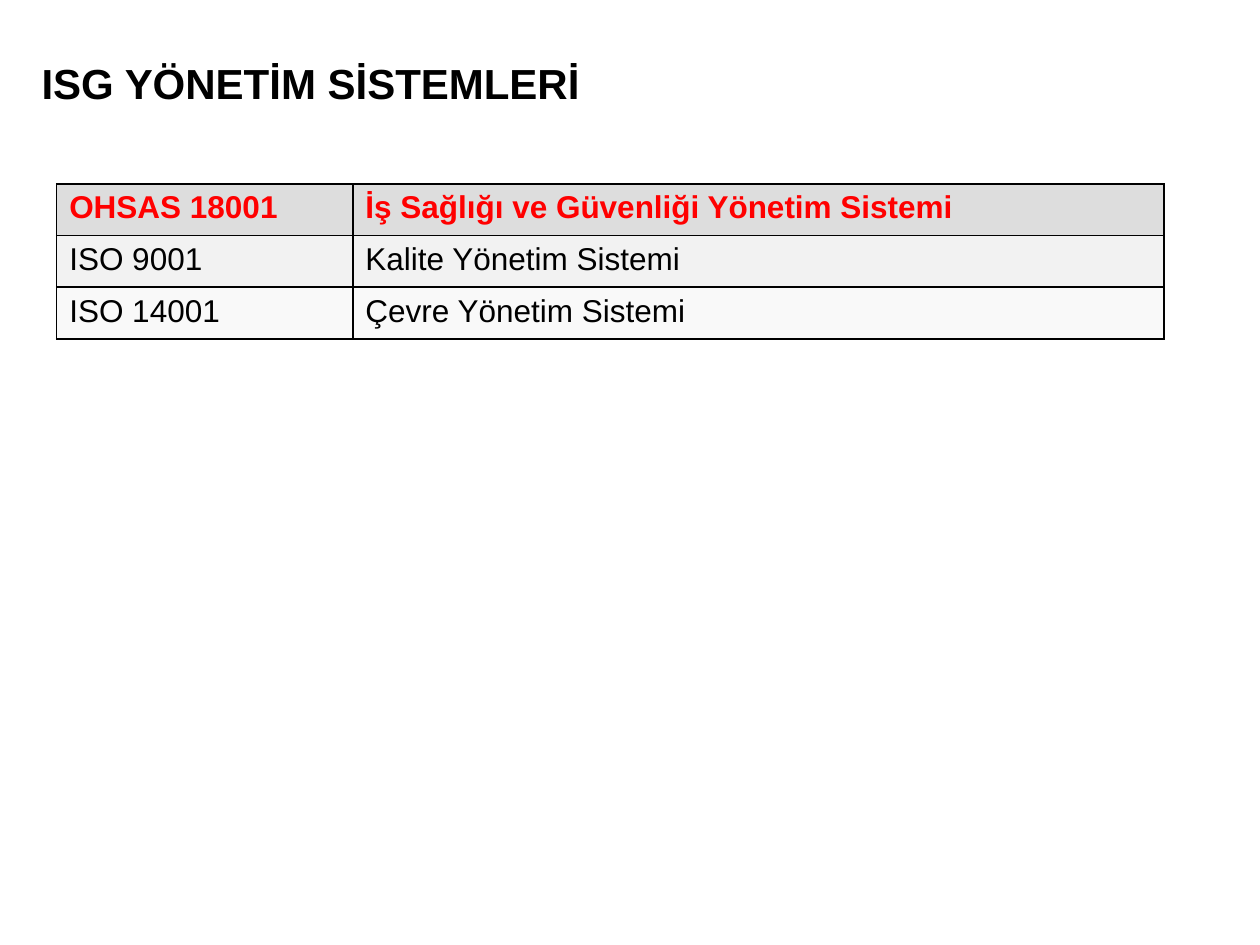
from lxml import etree
from pptx import Presentation
from pptx.dml.color import RGBColor
from pptx.enum.text import MSO_ANCHOR
from pptx.oxml.ns import qn
from pptx.util import Inches, Pt

TOP = MSO_ANCHOR.TOP
FONT = "Arial"
COLORS = {
    "text": "000000",
    "highlight": "FF0000",
    "border": "000000",
    "header": "DDDDDD",
    "quality": "F2F2F2",
    "environment": "F9F9F9",
}
STANDARDS = [
    ("OHSAS 18001", "İş Sağlığı ve Güvenliği Yönetim Sistemi", "header"),
    ("ISO 9001", "Kalite Yönetim Sistemi", "quality"),
    ("ISO 14001", "Çevre Yönetim Sistemi", "environment"),
]
COLUMN_WIDTHS = [2.35, 6.44]
ROW_HEIGHT = 0.41


def style(paragraph, size, color, bold):
    font = paragraph.font
    font.name = FONT
    font.size = Pt(size)
    font.bold = bold
    font.color.rgb = RGBColor.from_string(COLORS[color])


def add_borders(cell):
    properties = cell._tc.get_or_add_tcPr()
    for side in ("a:lnL", "a:lnR", "a:lnT", "a:lnB"):
        line = etree.SubElement(properties, qn(side), w=str(Pt(1)))
        fill = etree.SubElement(line, qn("a:solidFill"))
        etree.SubElement(fill, qn("a:srgbClr"), val=COLORS["border"])


prs = Presentation()
prs.slide_width = Inches(10)
prs.slide_height = Inches(7.5)
slide = prs.slides.add_slide(prs.slide_layouts[6])

# Title
title = slide.shapes.add_textbox(Inches(0.33), Inches(0.45), Inches(9.32), Inches(0.71))
title_frame = title.text_frame
title_frame.word_wrap = True
title_frame.vertical_anchor = TOP
title_frame.margin_left = title_frame.margin_right = 0
title_frame.text = "ISG YÖNETİM SİSTEMLERİ"
title_frame.paragraphs[0].line_spacing = 0.9
style(title_frame.paragraphs[0], 24, "text", True)

# Management system standards
standards = slide.shapes.add_table(
    len(STANDARDS), len(COLUMN_WIDTHS), Inches(0.45), Inches(1.46),
    Inches(sum(COLUMN_WIDTHS)), Inches(ROW_HEIGHT * len(STANDARDS)),
).table
for column, width in zip(standards.columns, COLUMN_WIDTHS):
    column.width = Inches(width)

for row, (code, system, shade) in enumerate(STANDARDS):
    standards.rows[row].height = Inches(ROW_HEIGHT)
    is_header = row == 0
    for col, text in enumerate((code, system)):
        cell = standards.cell(row, col)
        cell.text = text
        style(cell.text_frame.paragraphs[0], 18, "highlight" if is_header else "text", is_header)
        add_borders(cell)
        cell.fill.solid()
        cell.fill.fore_color.rgb = RGBColor.from_string(COLORS[shade])

prs.save("out.pptx")
